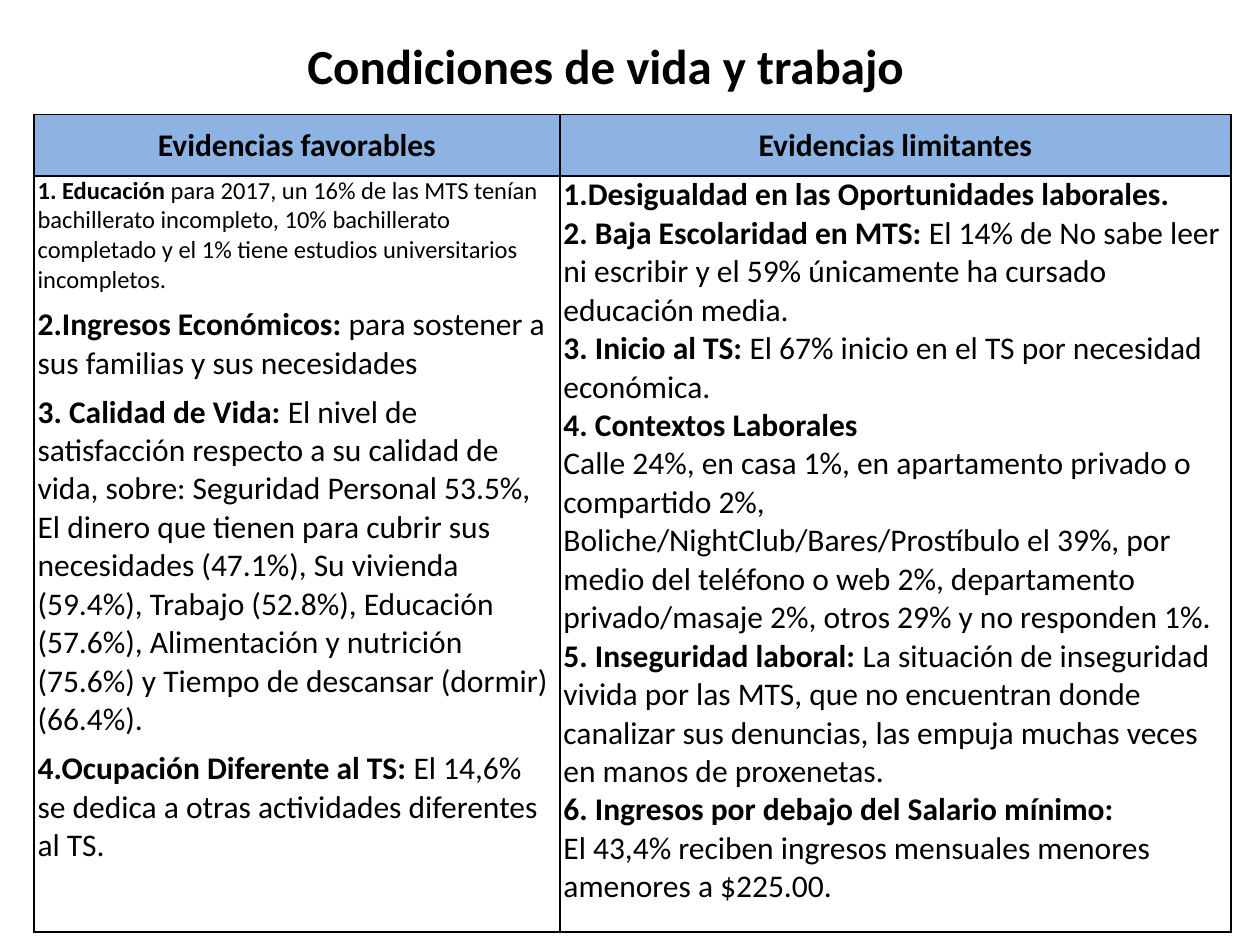
import pptx
import pptx.dml.color
import pptx.enum.text
import pptx.oxml.ns
import pptx.util
from lxml import etree

Pt = pptx.util.Pt
PP_ALIGN = pptx.enum.text.PP_ALIGN
ANCHOR = pptx.enum.text.MSO_ANCHOR

# Content: each paragraph is (bold lead, regular text, size, space before)
TITLE = "Condiciones de vida y trabajo"
HEADERS = ["Evidencias favorables", "Evidencias limitantes"]
FAVORABLE = [
    ("1. Educación ", "para 2017, un 16% de las MTS tenían bachillerato incompleto, "
     "10% bachillerato completado y el 1% tiene estudios universitarios incompletos.", 14, 0),
    ("2.Ingresos Económicos: ", "para sostener a sus familias y sus necesidades", 18, 6),
    ("3. Calidad de Vida: ", "El nivel de satisfacción respecto a su calidad de vida, sobre: "
     "Seguridad Personal 53.5%, El dinero que tienen para cubrir sus necesidades (47.1%), "
     "Su vivienda (59.4%), Trabajo (52.8%), Educación (57.6%), Alimentación y nutrición (75.6%) "
     "y Tiempo de descansar (dormir) (66.4%).", 18, 6),
    ("4.Ocupación Diferente al TS: ",
     "El 14,6% se dedica a otras actividades diferentes al TS.", 18, 6),
]
LIMITING = [
    ("1.Desigualdad en las Oportunidades laborales.", "", 18, 0),
    ("2. Baja Escolaridad en MTS: ", "El 14% de No sabe leer ni escribir y el 59% "
     "únicamente ha cursado educación media.", 18, 0),
    ("3. Inicio al TS: ", "El 67% inicio en el TS por necesidad económica.", 18, 0),
    ("4. Contextos Laborales", "", 18, 0),
    ("", "Calle 24%, en casa 1%, en apartamento privado o compartido 2%, "
     "Boliche/NightClub/Bares/Prostíbulo el 39%, por medio del teléfono o web 2%, "
     "departamento privado/masaje 2%, otros 29% y no responden 1%.", 18, 0),
    ("5. Inseguridad laboral: ", "La situación de inseguridad vivida por las MTS, que no "
     "encuentran donde canalizar sus denuncias, las empuja muchas veces en manos de "
     "proxenetas.", 18, 0),
    ("6. Ingresos por debajo del Salario mínimo:", "", 18, 0),
    ("", "El 43,4% reciben ingresos mensuales menores amenores a $225.00.", 18, 0),
]
COL_WIDTHS = [300.5, 383.5]
ROW_HEIGHTS = [35, 432]
BLACK, HEADER_FILL = "000000", "8DB3E2"


def rgb(value):
    return pptx.dml.color.RGBColor.from_string(value)


def style(r, size, bold):
    r.font.name = "Calibri"
    r.font.size = Pt(size)
    r.font.bold = bold
    r.font.color.rgb = rgb(BLACK)


def write_heading(tf, text, size):
    p = tf.paragraphs[0]
    p.text = text
    p.alignment = PP_ALIGN.CENTER
    style(p.runs[0], size, True)


def write_body(tf, paragraphs):
    for i, (lead, text, size, before) in enumerate(paragraphs):
        p = tf.add_paragraph() if i else tf.paragraphs[0]
        p.space_before = Pt(before)
        for part, bold in ((lead, True), (text, False)):
            if part:
                r = p.add_run()
                r.text = part
                style(r, size, bold)


def add_borders(cell):
    tc_pr = cell._tc.get_or_add_tcPr()
    qn = pptx.oxml.ns.qn
    for i, side in enumerate(("a:lnL", "a:lnR", "a:lnT", "a:lnB")):
        ln = etree.Element(qn(side), w=str(Pt(1)))
        fill = etree.SubElement(ln, qn("a:solidFill"))
        etree.SubElement(fill, qn("a:srgbClr"), val=BLACK)
        tc_pr.insert(i, ln)  # borders come before the fill


prs = pptx.Presentation()
prs.slide_width, prs.slide_height = Pt(720), Pt(540)
s = prs.slides.add_slide(prs.slide_layouts[6])

# Evidence table
table = s.shapes.add_table(2, 2, Pt(19.5), Pt(65.5), Pt(sum(COL_WIDTHS)),
                           Pt(sum(ROW_HEIGHTS))).table
for col, width in zip(table.columns, COL_WIDTHS):
    col.width = Pt(width)
for row, height in zip(table.rows, ROW_HEIGHTS):
    row.height = Pt(height)

for c, (header, body) in enumerate(zip(HEADERS, (FAVORABLE, LIMITING))):
    head_cell, body_cell = table.cell(0, c), table.cell(1, c)
    for cell in (head_cell, body_cell):
        cell.margin_left = cell.margin_right = Pt(2)
        cell.margin_top = cell.margin_bottom = 0
        add_borders(cell)
    head_cell.fill.solid()
    head_cell.fill.fore_color.rgb = rgb(HEADER_FILL)
    head_cell.vertical_anchor = ANCHOR.MIDDLE
    write_heading(head_cell.text_frame, header, 18)
    body_cell.fill.background()
    body_cell.vertical_anchor = ANCHOR.TOP
    write_body(body_cell.text_frame, body)

# Title
tf = s.shapes.add_textbox(Pt(8.5), Pt(16.5), Pt(675), Pt(41)).text_frame
tf.word_wrap = True
tf.auto_size = pptx.enum.text.MSO_AUTO_SIZE.SHAPE_TO_FIT_TEXT
write_heading(tf, TITLE, 28)

prs.save("out.pptx")
